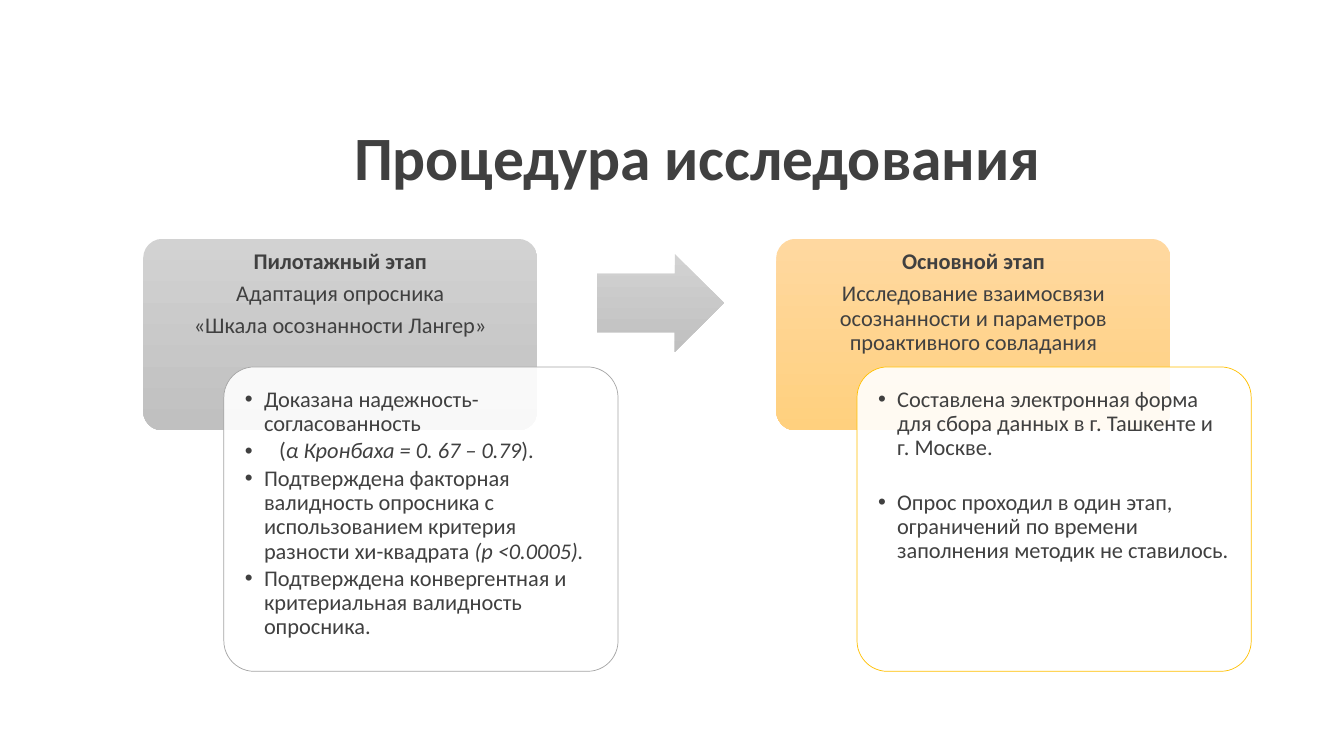
import pptx
import pptx.util
import pptx.dml.color
import pptx.enum.shapes
import pptx.enum.text
import pptx.oxml.ns
from lxml import etree

Inches, Pt = pptx.util.Inches, pptx.util.Pt
SHAPE = pptx.enum.shapes.MSO_SHAPE
ALIGN = pptx.enum.text.PP_ALIGN
ANCHOR = pptx.enum.text.MSO_ANCHOR
RGB = pptx.dml.color.RGBColor.from_string
qn = pptx.oxml.ns.qn

COLORS = {
    "text": "404040", "white": "FFFFFF",
    "gray_top": "D2D2D2", "gray_bottom": "C0C0C0", "gray_line": "A5A5A5",
    "gold_top": "FFD8A0", "gold_bottom": "FFD07E", "gold_line": "FFC000",
}


def write(p, text, size=16, bold=False, align=ALIGN.CENTER, after=0, before=0, hang=0):
    pPr = p._p.get_or_add_pPr()
    if hang:
        pPr.set("marL", str(Inches(hang)))
        pPr.set("indent", str(-Inches(hang)))
        etree.SubElement(pPr, qn("a:buFont"), typeface="Arial")
        etree.SubElement(pPr, qn("a:buChar"), char="•")
    p.alignment = align
    p.line_spacing = 0.9
    p.space_before, p.space_after = Pt(before), Pt(after)
    for i, part in enumerate(text.split("|")):
        r = p.add_run()
        r.text = part
        f = r.font
        f.name, f.size, f.bold, f.italic = "Calibri", Pt(size), bold, i % 2 == 1
        f.color.rgb = RGB(COLORS["text"])


def add_box(kind, x, y, w, h, adjustments, tone=None, inset=0.12):
    sp = s.shapes.add_shape(kind, Inches(x), Inches(y), Inches(w), Inches(h))
    sp.shadow.inherit = False
    for i, value in enumerate(adjustments):
        sp.adjustments[i] = value
    sp.line.fill.background()
    if tone:
        sp.fill.gradient()
        sp.fill.gradient_angle = 270
        for stop, end in zip(sp.fill.gradient_stops, ("top", "bottom")):
            stop.color.rgb = RGB(COLORS[f"{tone}_{end}"])
    tf = sp.text_frame
    tf.word_wrap = True
    tf.vertical_anchor = ANCHOR.TOP
    tf.margin_left = tf.margin_right = Inches(inset)
    tf.margin_top = tf.margin_bottom = Inches(inset)
    return sp


STAGES = [
    ("gray",
     ["Пилотажный этап", "Адаптация опросника", "«Шкала осознанности Лангер»"],
     [("Доказана надежность-согласованность", {}),
      ("(|α Кронбаха = 0. 67 – 0.79|).", {"hang": 0.34}),
      ("Подтверждена факторная валидность опросника с использованием критерия "
       "разности хи-квадрата |(p <0.0005).", {}),
      ("Подтверждена конвергентная и критериальная валидность опросника.", {})]),
    ("gold",
     ["Основной этап",
      "Исследование взаимосвязи осознанности и параметров проактивного совладания"],
     [("Составлена электронная форма для сбора данных в г. Ташкенте и г. Москве.", {}),
      ("Опрос проходил в один этап, ограничений по времени заполнения методик "
       "не ставилось.", {"before": 19.5})]),
]

prs = pptx.Presentation()
prs.slide_width, prs.slide_height = Inches(13.33), Inches(7.5)
s = prs.slides.add_slide(prs.slide_layouts[5])

title = s.shapes.title
title.left, title.top = Inches(1.17), Inches(0.87)
title.width, title.height = Inches(11.5), Inches(1.45)
title.text_frame.vertical_anchor = ANCHOR.MIDDLE
write(title.text_frame.paragraphs[0], "Процедура исследования", size=44, bold=True)

for n, (tone, heading, points) in enumerate(STAGES):
    x = 1.42 + 6.28 * n
    header = add_box(SHAPE.ROUNDED_RECTANGLE, x, 2.37, 3.91, 1.9, [0.1], tone, inset=0.06)
    tf = header.text_frame
    for i, text in enumerate(heading):
        p = tf.add_paragraph() if i else tf.paragraphs[0]
        write(p, text, bold=i == 0, after=5.6)

    card = add_box(SHAPE.ROUNDED_RECTANGLE, x + 0.8, 3.64, 3.91, 3.02, [0.1])
    card.fill.solid()
    card.fill.fore_color.rgb = RGB(COLORS["white"])
    color = card._element.spPr.find(qn("a:solidFill"))[0]
    etree.SubElement(color, qn("a:alpha"), val="90000")
    card.line.color.rgb = RGB(COLORS[f"{tone}_line"])
    card.line.width = Pt(0.5)
    tf = card.text_frame
    for i, (text, fmt) in enumerate(points):
        p = tf.add_paragraph() if i else tf.paragraphs[0]
        write(p, text, **{"align": ALIGN.LEFT, "after": 2.4, "hang": 0.19, **fmt})

add_box(SHAPE.RIGHT_ARROW, 5.92, 2.52, 1.26, 0.97, [0.6, 0.5], "gray")

prs.save("out.pptx")
